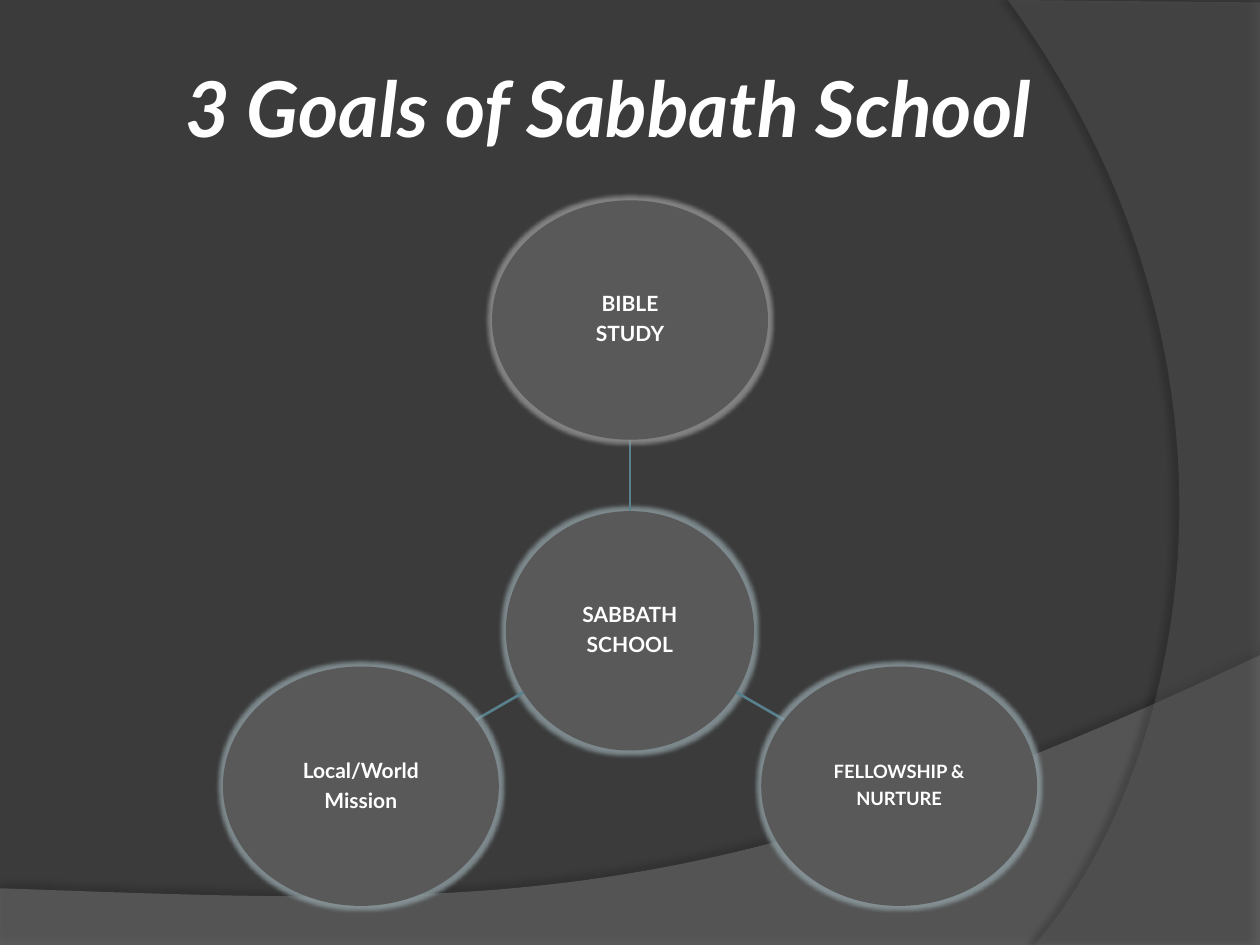
from math import cos, hypot, radians, sin

from lxml.etree import SubElement
from pptx import Presentation
from pptx.dml.color import RGBColor
from pptx.enum.shapes import MSO_CONNECTOR, MSO_SHAPE
from pptx.enum.text import MSO_ANCHOR, PP_ALIGN
from pptx.oxml.ns import qn
from pptx.util import Inches, Pt

FONT = "Lato"
WHITE, BACKDROP, NODE, LINK = "FFFFFF", "3B3B3B", "595959", "58808D"
GREY_GLOW, BLUE_GLOW = "999999", "93A3A8"


def color(value):
    return RGBColor.from_string(value)


def set_alpha(color_element, percent):
    SubElement(color_element, qn("a:alpha"), val=str(percent * 1000))


def add_effect(shape, kind, value, alpha, **attributes):
    """Give a shape one effect, a glow or an outer shadow."""
    shape.shadow.inherit = False
    effects = shape._element.spPr.find(qn("a:effectLst"))
    effect = SubElement(effects, qn(f"a:{kind}"), **attributes)
    set_alpha(SubElement(effect, qn("a:srgbClr"), val=value), alpha)


def write_text(shape, lines, size, inset, italic=False, line_spacing=1.0, space_after=0):
    frame = shape.text_frame
    frame.word_wrap = True
    frame.vertical_anchor = MSO_ANCHOR.MIDDLE
    frame.margin_left = frame.margin_right = Inches(inset)
    frame.margin_top = frame.margin_bottom = Inches(inset)
    for index, line in enumerate(lines):
        paragraph = frame.add_paragraph() if index else frame.paragraphs[0]
        paragraph.alignment = PP_ALIGN.CENTER
        paragraph.line_spacing = line_spacing
        paragraph.space_after = Pt(space_after)
        run = paragraph.add_run()
        run.text = line
        run.font.name, run.font.size = FONT, Pt(size)
        run.font.bold, run.font.italic = True, italic
        run.font.color.rgb = color(WHITE)


def curve(start, control_1, control_2, end, steps=60):
    """Points along a cubic curve."""
    points = []
    for step in range(steps + 1):
        t = step / steps
        weights = ((1 - t) ** 3, 3 * t * (1 - t) ** 2, 3 * t ** 2 * (1 - t), t ** 3)
        points.append(tuple(
            sum(weight * value for weight, value in zip(weights, values))
            for values in zip(start, control_1, control_2, end)))
    return points


def add_sweep(slide, left, top, points, fill, alpha, shadow_alpha, direction):
    corners = [(Inches(left + x), Inches(top + y)) for x, y in points]
    builder = slide.shapes.build_freeform(*corners[0])
    builder.add_line_segments(corners[1:], close=True)
    shape = builder.convert_to_shape()
    shape.fill.solid()
    shape.fill.fore_color.rgb = color(fill)
    set_alpha(shape._element.spPr.find(qn("a:solidFill"))[0], alpha)
    shape.line.fill.background()
    add_effect(shape, "outerShdw", "000000", shadow_alpha, blurRad=str(Pt(4)),
               dist=str(Pt(4)), dir=str(direction * 60000), rotWithShape="0")


def add_background(slide, left, top, width, height):
    slide.background.fill.solid()
    slide.background.fill.fore_color.rgb = color(BACKDROP)
    # Band along the bottom
    band = curve((width, 5.2), (5.59, 7.29), (3.91, 7.19), (0, 7.05))
    add_sweep(slide, left, top, band + [(0, height), (width, height)],
              "7F7F7F", 45, 35, 270)
    # Arc on the right
    arc = curve((8.21, height), (9.35, 6.19), (10.18, 3), (8, 0))
    add_sweep(slide, left, top, arc + [(width, 0.02), (width, height)],
              "5E5E5E", 40, 45, 180)


def add_title(slide, left, top, width, height):
    box = slide.shapes.add_textbox(
        Inches(left), Inches(top), Inches(width), Inches(height))
    write_text(box, ["3 Goals of Sabbath School"], 44, inset=0.05, italic=True)


def add_node(slide, center, size, lines, font_size, glow):
    (x, y), (width, height) = center, size
    node = slide.shapes.add_shape(
        MSO_SHAPE.OVAL, Inches(x - width / 2), Inches(y - height / 2),
        Inches(width), Inches(height))
    node.fill.solid()
    node.fill.fore_color.rgb = color(NODE)
    node.line.fill.background()
    add_effect(node, "glow", glow, 75, rad=str(Pt(5)))
    write_text(node, lines, font_size, inset=0.01, line_spacing=0.9,
               space_after=round(0.35 * font_size, 1))


def edge_distance(size, angle):
    """Distance from the centre of an oval to its edge."""
    width, height = size
    return 1 / hypot(cos(angle) / (width / 2), sin(angle) / (height / 2))


def add_link(slide, start, end):
    link = slide.shapes.add_connector(
        MSO_CONNECTOR.STRAIGHT, *(Inches(value) for value in (*start, *end)))
    link.line.color.rgb = color(LINK)
    link.line.width = Pt(1.5)
    SubElement(link._element.spPr, qn("a:effectLst"))


def add_radial_diagram(slide, left, top, width, height):
    hub_size, goal_size = (1.97, 1.9), (2.19, 1.9)
    # Three goals at 120 degrees fill one and a half orbits in height
    orbit = (height - goal_size[1]) / 1.5
    hub = (left + width / 2, top + goal_size[1] / 2 + orbit)
    goals = [
        (-90, ["BIBLE", "STUDY"], 12, GREY_GLOW),
        (30, ["FELLOWSHIP &", "NURTURE"], 10.5, BLUE_GLOW),
        (150, ["Local/World", "Mission"], 12, BLUE_GLOW),
    ]

    def at(distance, angle):
        return hub[0] + distance * cos(angle), hub[1] + distance * sin(angle)

    add_node(slide, hub, hub_size, ["SABBATH", "SCHOOL"], 12, BLUE_GLOW)
    for degrees, lines, font_size, glow in goals:
        angle = radians(degrees)
        add_link(slide, at(edge_distance(hub_size, angle), angle),
                 at(orbit - edge_distance(goal_size, angle), angle))
        add_node(slide, at(orbit, angle), goal_size, lines, font_size, glow)


def main():
    presentation = Presentation()
    presentation.slide_width, presentation.slide_height = Inches(10), Inches(7.5)
    slide = presentation.slides.add_slide(presentation.slide_layouts[6])
    add_background(slide, 0, 0, 10, 7.5)
    add_title(slide, 0.25, 0.25, 9.16, 1.2)
    add_radial_diagram(slide, 1.77, 1.59, 6.46, 5.6)
    presentation.save("out.pptx")


if __name__ == "__main__":
    main()
